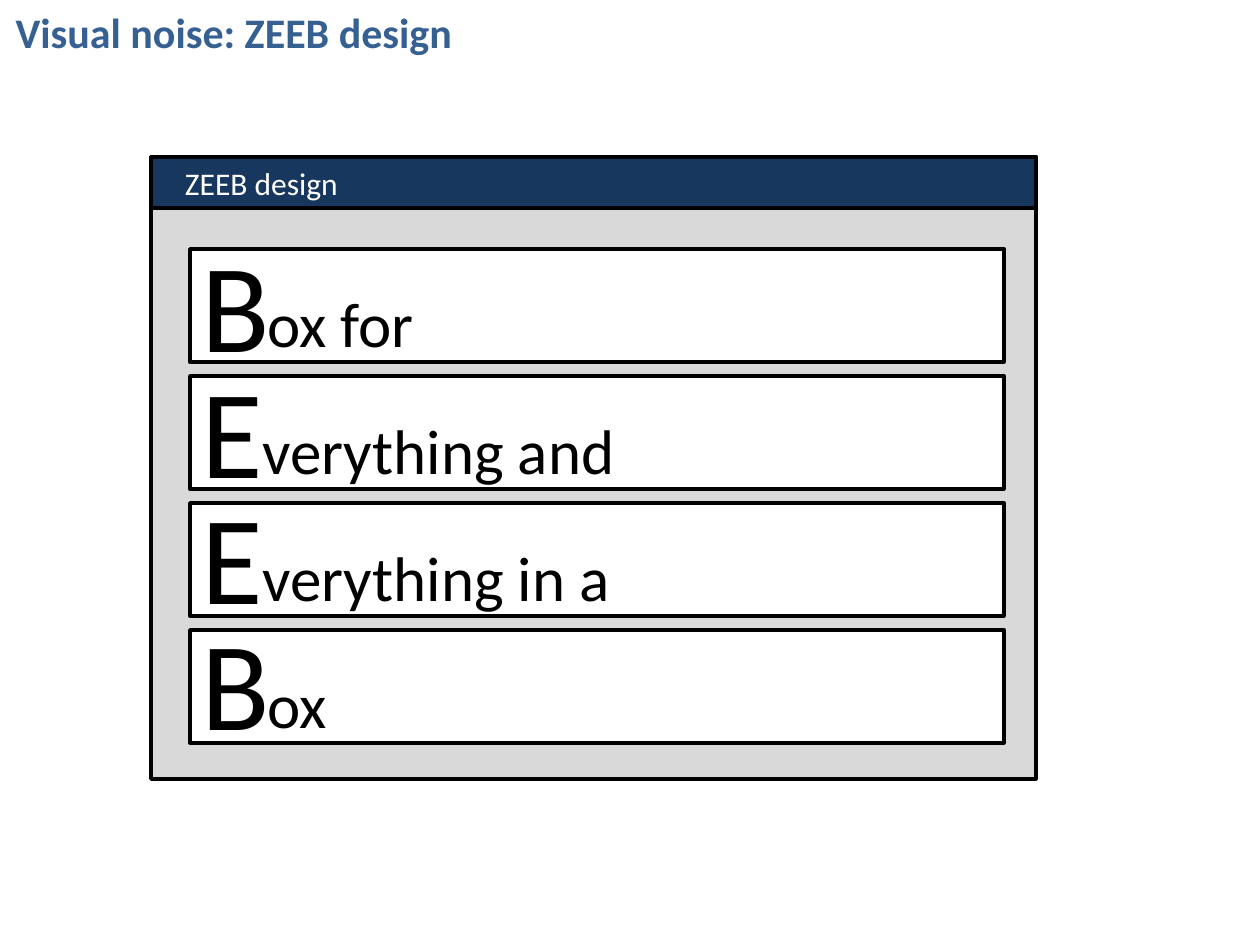
from pptx import Presentation
from pptx.dml.color import RGBColor
from pptx.enum.shapes import MSO_SHAPE
from pptx.enum.text import MSO_ANCHOR, MSO_AUTO_SIZE, PP_ALIGN
from pptx.util import Emu, Pt

RECTANGLE = MSO_SHAPE.RECTANGLE
TOP, MIDDLE = MSO_ANCHOR.TOP, MSO_ANCHOR.MIDDLE
LEFT = PP_ALIGN.LEFT
NO_AUTOFIT = MSO_AUTO_SIZE.NONE

TITLE = "Visual noise: ZEEB design"
WINDOW_TITLE = "ZEEB design"
ROWS = [
    {"initial": "B", "initial_width": 95, "rest": "ox for", "rest_left": 255, "rest_width": 307},
    {"initial": "E", "initial_width": 87, "rest": "verything and", "rest_left": 250, "rest_width": 380},
    {"initial": "E", "initial_width": 87, "rest": "verything in a", "rest_left": 250, "rest_width": 376},
    {"initial": "B", "initial_width": 95, "rest": "ox", "rest_left": 255, "rest_width": 86},
]
COLORS = {
    "title": "376092", "bar": "17375E", "window": "D9D9D9",
    "row": "FFFFFF", "line": "000000", "text": "000000", "bar_text": "FFFFFF",
}
TITLE_BOX = (3, 0, 1181, 63)
WINDOW = (151, 157, 885, 622)
BAR = (151, 157, 885, 51)
BAR_INDENT = 34
ROW_LEFT, ROW_TOP, ROW_WIDTH, ROW_HEIGHT = 190, 249, 814, 113
ROW_PITCH = 127
INITIAL_LEFT, INITIAL_TOP, INITIAL_HEIGHT, INITIAL_PITCH = 189, 220, 165, 126
REST_TOP, REST_HEIGHT = 278, 89
SCALE = 914400 / 126


def px(value):
    return Emu(round(value * SCALE))


def color(name):
    return RGBColor.from_string(COLORS[name])


def add_rectangle(slide, box, fill):
    shape = slide.shapes.add_shape(RECTANGLE, *map(px, box))
    shape.shadow.inherit = False
    shape.fill.solid()
    shape.fill.fore_color.rgb = color(fill)
    shape.line.color.rgb = color("line")
    shape.line.width = Pt(2)
    return shape


def write(shape, text, size, text_color, anchor=TOP, bold=False):
    frame = shape.text_frame
    frame_format = {"word_wrap": True, "auto_size": NO_AUTOFIT,
                    "vertical_anchor": anchor, "margin_right": 0}
    for name, value in frame_format.items():
        setattr(frame, name, value)
    paragraph = frame.paragraphs[0]
    paragraph.alignment = LEFT
    run = paragraph.add_run()
    run.text = text
    for name, value in {"name": "Calibri", "size": Pt(size), "bold": bold}.items():
        setattr(run.font, name, value)
    run.font.color.rgb = color(text_color)


def add_text(slide, box, text, size):
    write(slide.shapes.add_textbox(*map(px, box)), text, size, "text")


def main():
    presentation = Presentation()
    presentation.slide_width, presentation.slide_height = px(1260), px(945)
    slide = presentation.slides.add_slide(presentation.slide_layouts[5])

    title = slide.shapes.title
    for name, value in zip(("left", "top", "width", "height"), TITLE_BOX):
        setattr(title, name, px(value))
    write(title, TITLE, 24, "title", bold=True)

    add_rectangle(slide, WINDOW, "window")
    for index, row in enumerate(ROWS):
        offset = index * ROW_PITCH
        add_rectangle(slide, (ROW_LEFT, ROW_TOP + offset, ROW_WIDTH, ROW_HEIGHT), "row")
        initial_top = INITIAL_TOP + index * INITIAL_PITCH
        add_text(slide, (INITIAL_LEFT, initial_top, row["initial_width"], INITIAL_HEIGHT),
                 row["initial"], 72)
        add_text(slide, (row["rest_left"], REST_TOP + offset, row["rest_width"], REST_HEIGHT),
                 row["rest"], 36)

    bar = add_rectangle(slide, BAR, "bar")
    write(bar, WINDOW_TITLE, 18, "bar_text", anchor=MIDDLE)
    bar.text_frame.margin_left = px(BAR_INDENT)

    presentation.save("out.pptx")


if __name__ == "__main__":
    main()
